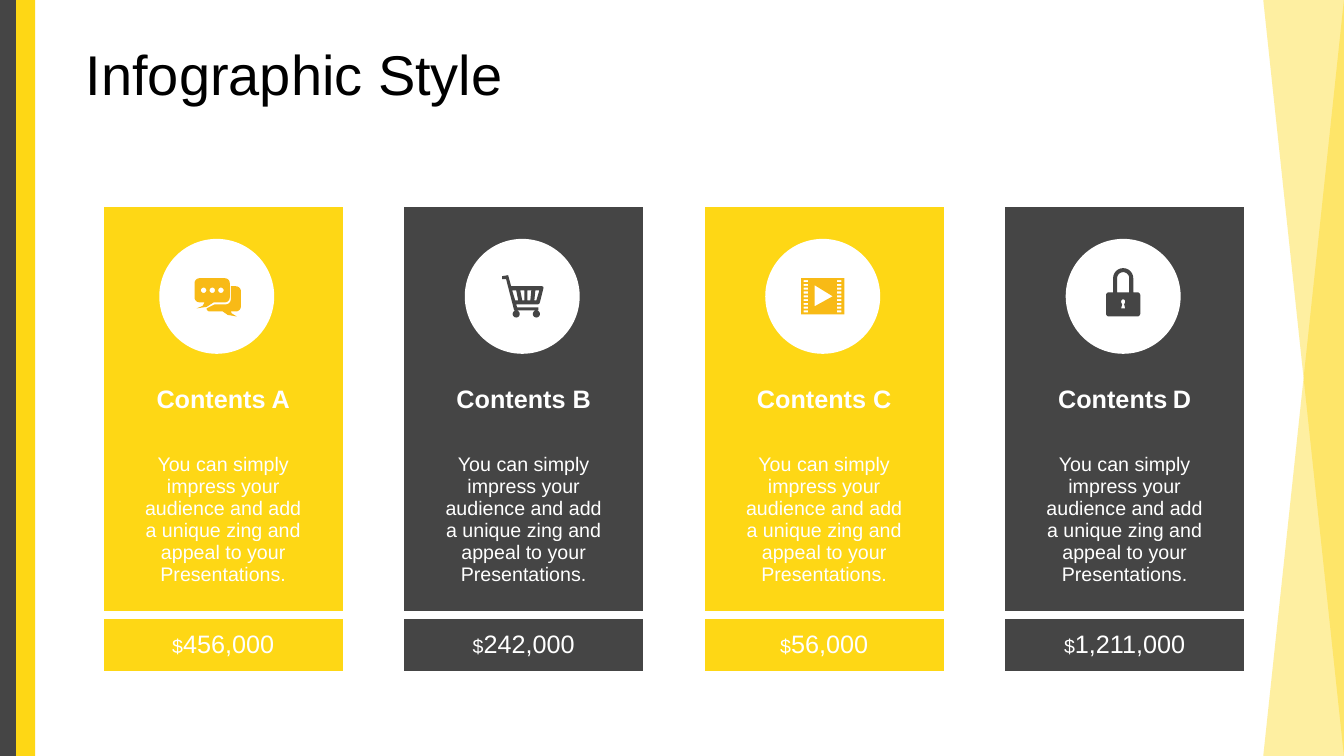
from dataclasses import dataclass

from lxml import etree
from pptx import Presentation
from pptx import util as u
from pptx.dml.color import RGBColor
from pptx.enum import shapes, text
from pptx.oxml import ns


@dataclass(frozen=True)
class Theme:
    yellow: str = "FED715"
    amber: str = "F8BA16"
    dark: str = "454545"
    white: str = "FFFFFF"
    black: str = "000000"
    font: str = "Arial"
    title: int = 40
    heading: int = 18
    body: int = 14
    gap: int = 6


T = Theme()
W, H = 13.33, 7.5

# Card grid in inches
CARD_LEFT, CARD_TOP, CARD_PITCH = 1.03, 2.05, 2.98
COLS = (0.23, 1.89, 0.23)
ROWS = (1.73, 0.43, 1.89, 0.59)
BADGE_SIZE, BADGE_TOP = 1.14, 2.37

BLURB = ("You can simply impress your audience and add a unique zing "
         "and appeal to your Presentations.")


# Text
def write(tf, runs, size=T.body, color=T.white, bold=False,
          align=text.PP_ALIGN.CENTER):
    """Fill the first paragraph; a run is a string or a (string, size) pair."""
    p = tf.paragraphs[0]
    p.alignment = align
    for item in [runs] if isinstance(runs, str) else runs:
        words, points = (item, size) if isinstance(item, str) else item
        r = p.add_run()
        r.text = words
        r.font.name, r.font.size, r.font.bold = T.font, u.Pt(points), bold
        r.font.color.rgb = RGBColor.from_string(color)
    return p


# Shapes
def paint(sp, color):
    sp.shadow.inherit = False
    sp.fill.solid()
    sp.fill.fore_color.rgb = RGBColor.from_string(color)
    sp.line.fill.background()
    return sp


def block(s, kind, x, y, w, h, color):
    return paint(s.shapes.add_shape(kind, *map(u.Inches, (x, y, w, h))), color)


def side_wedge(s, flips):
    sp = block(s, shapes.MSO_SHAPE.RIGHT_TRIANGLE, W - 0.8, 0, 0.8, H, T.yellow)
    for flip in flips:
        sp.element.spPr.find(ns.qn("a:xfrm")).set(flip, "1")
    rgb = sp.element.spPr.find(".//" + ns.qn("a:srgbClr"))
    etree.SubElement(rgb, ns.qn("a:alpha"), val="40000")


# Icons: outlines in hundredths of an inch around the badge centre
def outline(*corners, steps=6):
    """Turn corners (x, y[, radius]) into a polygon with rounded corners."""
    points = []
    for i, (x, y, *radius) in enumerate(corners):
        if not radius:
            points.append((x, y))
            continue
        ends = []
        for nx, ny, *_ in (corners[i - 1], corners[(i + 1) % len(corners)]):
            share = radius[0] / ((nx - x) ** 2 + (ny - y) ** 2) ** 0.5
            ends.append((x + (nx - x) * share, y + (ny - y) * share))
        (ax, ay), (bx, by) = ends
        for n in range(steps + 1):
            t = n / steps
            # Cubic arc with both handles 55% of the way to the corner
            a = (1 - t) ** 3 + 1.35 * t * (1 - t) ** 2
            b = t ** 3 + 1.35 * t ** 2 * (1 - t)
            c = 1 - a - b
            points.append((a * ax + b * bx + c * x, a * ay + b * by + c * y))
    return points


def box(x, y, w, h):
    return outline((x, y), (x + w, y), (x + w, y + h), (x, y + h))


def dot(x, y, r):
    return outline((x - r, y - r, r), (x + r, y - r, r),
                   (x + r, y + r, r), (x - r, y + r, r))


CHAT = [
    outline((-22, -18, 5), (13, -18, 5), (13, 6, 5), (-3, 6), (-10, 10.5),
            (-20, 12), (-14, 9.5), (-12, 6), (-22, 6, 5)),
    outline((14, -10), (24, -10, 5), (24, 15, 5), (14, 15), (15, 17), (20, 20),
            (11, 18.5), (6, 15), (-10, 15, 3), (-10, 12), (-2, 8), (14, 8, 5)),
    *[dot(x, -6, 2.7) for x in (-13, -4.4, 4.2)],
]
CART = [
    outline((-20, -20), (-14, -21), (-11, -10), (21.5, -10, 2), (17, 8, 2),
            (-6, 8), (-5, 11), (16, 11), (16, 14), (-8, 14), (-16, -17),
            (-20, -17)),
    outline((-10, -6), (-6, -6), (-4, 4), (-7, 4)),
    outline((-2, -6), (2, -6), (2, 4), (0, 4)),
    outline((5, -6), (9, -6), (8, 4), (5, 4)),
    outline((13, -6), (17, -6), (14, 4), (12, 4)),
    *[dot(x, 17.5, 3.5) for x in (-6, 14)],
]
FILM = [
    box(-21.5, -18, 43, 36),
    outline((-8, -11), (10, 0), (-8, 10)),
    *[box(x, -16 + 3.75 * n, 4.5, 2) for x in (-19, 14) for n in range(9)],
]
LOCK = [
    outline((-17, -4, 3), (-10, -4), (-10, -28, 10), (10, -28, 10), (10, -4),
            (17, -4, 3), (17, 20, 3), (-17, 20, 3)),
    outline((-6, -4), (-6, -24, 6), (6, -24, 6), (6, -4)),
    outline((-2, 3, 2), (2, 3, 2), (2, 6), (1, 8), (2, 12), (-2, 12), (-1, 8),
            (-2, 6)),
]


def badge(s, x, icon, color):
    block(s, shapes.MSO_SHAPE.OVAL, x, BADGE_TOP, BADGE_SIZE, BADGE_SIZE, T.white)
    cx, cy = x + BADGE_SIZE / 2, BADGE_TOP + BADGE_SIZE / 2
    contours = [[(u.Inches(cx + px / 100), u.Inches(cy + py / 100))
                 for px, py in contour] for contour in icon]
    builder = s.shapes.build_freeform(*contours[0][0])
    for n, contour in enumerate(contours):
        if n:
            builder.move_to(*contour[0])
        builder.add_line_segments(contour[1:], close=True)
    paint(builder.convert_to_shape(), color)


# Cards
def set_borders(cell, sides):
    """White rules on the given sides, no rule on the others."""
    tcPr = cell._tc.get_or_add_tcPr()
    for n, side in enumerate("LRTB"):
        ln = etree.Element(ns.qn("a:ln" + side), w=str(u.Pt(T.gap)))
        if side in sides:
            fill = etree.SubElement(ln, ns.qn("a:solidFill"))
            etree.SubElement(fill, ns.qn("a:srgbClr"), val=T.white)
        else:
            etree.SubElement(ln, ns.qn("a:noFill"))
        tcPr.insert(n, ln)


def card(s, x, color, heading, price):
    table = s.shapes.add_table(
        len(ROWS), len(COLS),
        *map(u.Inches, (x, CARD_TOP, sum(COLS), sum(ROWS)))).table
    table.first_row = table.horz_banding = False
    for column, width in zip(table.columns, COLS):
        column.width = u.Inches(width)
    for row, height, sides in zip(table.rows, ROWS, ("", "", "B", "TB")):
        row.height = u.Inches(height)
        for cell in row.cells:
            cell.fill.solid()
            cell.fill.fore_color.rgb = RGBColor.from_string(color)
            set_borders(cell, sides)
    for n in (0, 1, 3):
        table.cell(n, 0).merge(table.cell(n, 2))
    write(table.cell(1, 0).text_frame, heading, size=T.heading, bold=True)
    write(table.cell(2, 1).text_frame, BLURB)
    write(table.cell(3, 0).text_frame, ["$", (price, T.heading)])
    for cell in (table.cell(2, 1), table.cell(3, 0)):
        cell.vertical_anchor = text.MSO_ANCHOR.MIDDLE


def title(s, words):
    sp = s.shapes.title
    sp.left, sp.top, sp.width, sp.height = map(u.Inches, (0.75, 0.37, 12.26, 0.79))
    sp.text_frame.vertical_anchor = text.MSO_ANCHOR.MIDDLE
    p = write(sp.text_frame, words, size=T.title, color=T.black,
              align=text.PP_ALIGN.LEFT)
    p.line_spacing, p.space_before = 0.9, u.Pt(10)


def main():
    prs = Presentation()
    prs.slide_width, prs.slide_height = u.Inches(W), u.Inches(H)
    s = prs.slides.add_slide(prs.slide_layouts[5])

    # Edge decoration
    side_wedge(s, ("flipH", "flipV"))
    for x, color in ((0, T.dark), (0.16, T.yellow)):
        block(s, shapes.MSO_SHAPE.RECTANGLE, x, 0, 0.19, H, color)
    side_wedge(s, ("flipH",))
    title(s, "Infographic Style")

    # Four cards, each with its badge
    spaced_d = ["Contents", (" ", T.body), "D"]
    cards = (
        (T.yellow, "Contents A", "456,000", CHAT, T.amber, 0.55),
        (T.dark, "Contents B", "242,000", CART, T.dark, 0.6),
        (T.yellow, "Contents C", "56,000", FILM, T.amber, 0.6),
        (T.dark, spaced_d, "1,211,000", LOCK, T.dark, 0.6),
    )
    for n, (color, heading, price, icon, icon_color, inset) in enumerate(cards):
        x = CARD_LEFT + n * CARD_PITCH
        card(s, x, color, heading, price)
        badge(s, x + inset, icon, icon_color)

    prs.save("out.pptx")


if __name__ == "__main__":
    main()
